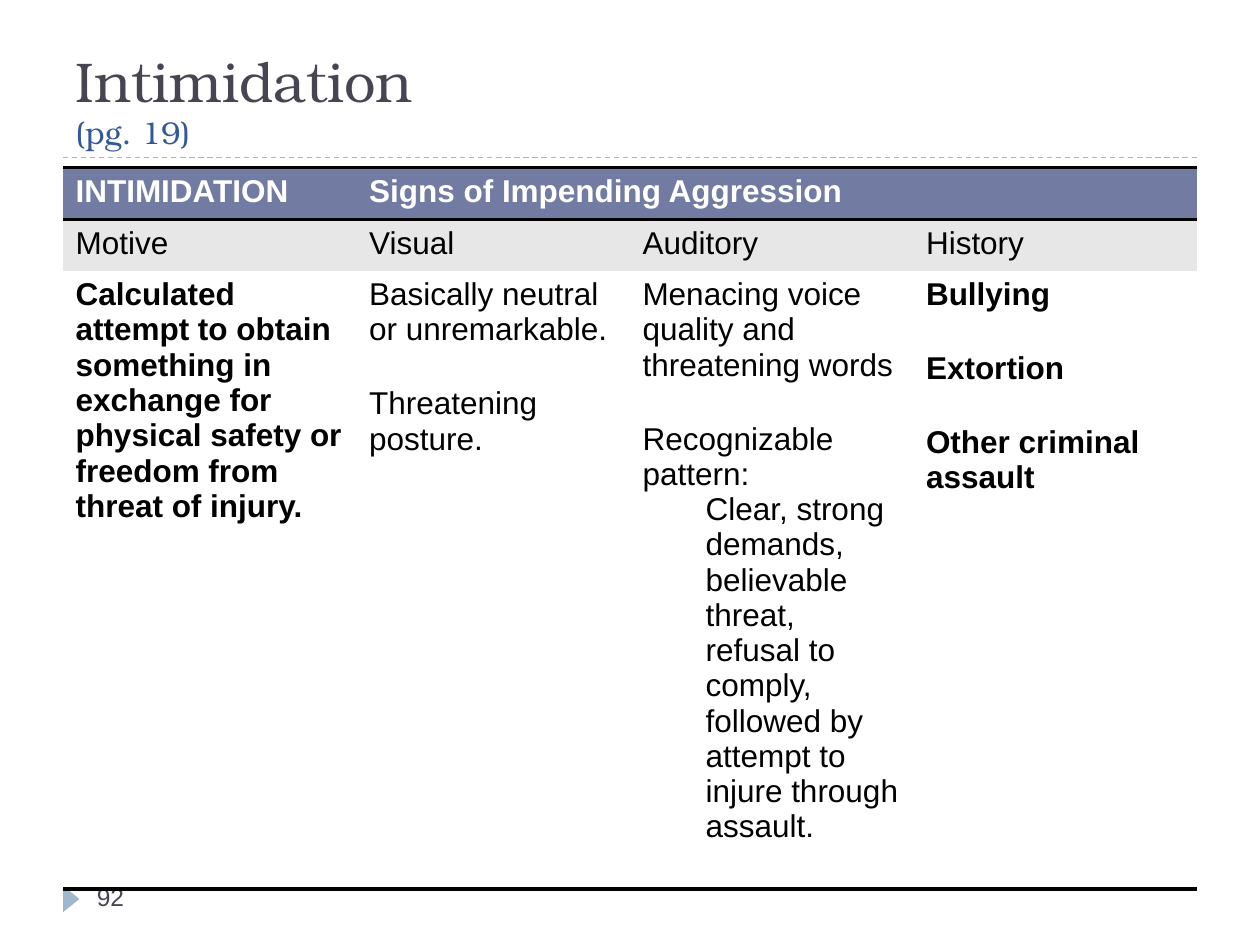
from lxml import etree
from pptx import Presentation
from pptx.dml.color import RGBColor
from pptx.enum.dml import MSO_LINE
from pptx.enum.shapes import MSO_CONNECTOR, MSO_SHAPE
from pptx.enum.text import MSO_ANCHOR, MSO_AUTO_SIZE, PP_ALIGN
from pptx.oxml.ns import qn
from pptx.util import Inches, Pt

STRAIGHT, TRIANGLE = MSO_CONNECTOR.STRAIGHT, MSO_SHAPE.ISOSCELES_TRIANGLE
DASH, BOTTOM, LEFT = MSO_LINE.DASH, MSO_ANCHOR.BOTTOM, PP_ALIGN.LEFT
NO_AUTOFIT = MSO_AUTO_SIZE.NONE

BLACK = RGBColor(0x00, 0x00, 0x00)
WHITE = RGBColor(0xFF, 0xFF, 0xFF)
SLATE = RGBColor(0x46, 0x46, 0x53)
BLUE = RGBColor(0x33, 0x59, 0x99)
PALE_BLUE = RGBColor(0x9F, 0xB8, 0xCD)
HEADER_FILL = RGBColor(0x72, 0x7C, 0xA3)
SUBHEAD_FILL = RGBColor(0xE7, 0xE7, 0xE7)

TITLE_FONT, BODY_FONT = "TeX Gyre Bonum", "Arial"
PLAIN_TABLE = "{2D5ABB26-0587-4C30-8999-92F81FD0307C}"
MARGIN, CONTENT_WIDTH = Inches(0.5), Inches(9)
TITLE_RULE, FOOTER_RULE = Inches(1.25), Inches(6.95)
COLUMNS = [2.33, 2.17, 2.25, 2.25]
ROWS = [0.41, 0.41, 4.9]
ROW_FILLS = [HEADER_FILL, SUBHEAD_FILL, WHITE]
ROW_BORDERS = [("a:lnT", "a:lnB"), (), ("a:lnB",)]
PARAGRAPH_GAP = Pt(22)

# Each cell lists its paragraphs; each paragraph lists its lines,
# of which those after the first are indented.
CELLS = [
    [[["INTIMIDATION"]], [["Signs of Impending Aggression"]], [], []],
    [[["Motive"]], [["Visual"]], [["Auditory"]], [["History"]]],
    [
        [["Calculated attempt to obtain something in exchange for "
          "physical safety or freedom from threat of injury."]],
        [["Basically neutral or unremarkable."], ["Threatening posture."]],
        [["Menacing voice quality and threatening words"],
         ["Recognizable pattern:", "Clear, strong demands,",
          "believable threat,",
          "refusal to comply, followed by attempt to injure through assault."]],
        [["Bullying"], ["Extortion"], ["Other criminal assault"]],
    ],
]
BOLD_CELLS = {(0, 0), (0, 1), (2, 0), (2, 3)}


def add_border(cell, side):
    border = etree.SubElement(cell._tc.get_or_add_tcPr(), qn(side), w=str(Pt(2)))
    fill = etree.SubElement(border, qn("a:solidFill"))
    etree.SubElement(fill, qn("a:srgbClr"), val=str(BLACK))


deck = Presentation()
deck.slide_width, deck.slide_height = Inches(10), Inches(7.5)
page = deck.slides.add_slide(deck.slide_layouts[5])

# Dashed rules and page marker
for height in (FOOTER_RULE, TITLE_RULE):
    rule = page.shapes.add_connector(
        STRAIGHT, MARGIN, height, MARGIN + CONTENT_WIDTH, height)
    rule.line.color.rgb = PALE_BLUE
    rule.line.width = Pt(0.75)
    rule.line.dash_style = DASH
    etree.SubElement(rule._element.spPr, qn("a:effectLst"))

marker = page.shapes.add_shape(
    TRIANGLE, Inches(0.46), Inches(7.07), Inches(0.21), Inches(0.13))
marker.rotation = 90
marker.shadow.inherit = False
marker.fill.solid()
marker.fill.fore_color.rgb = PALE_BLUE
marker.line.fill.background()

# Title with page reference
title = page.shapes.title
title.left, title.top = MARGIN, Inches(0.17)
title.width, title.height = CONTENT_WIDTH, TITLE_RULE - title.top
title.text_frame.auto_size = NO_AUTOFIT
title.text_frame.vertical_anchor = BOTTOM
heading = title.text_frame.paragraphs[0]
heading.alignment = LEFT
heading.font.name = TITLE_FONT
for text, size, color in (("Intimidation", 32, SLATE), ("(pg. 19)", 18, BLUE)):
    if heading.runs:
        heading.add_line_break()
    span = heading.add_run()
    span.text = text
    span.font.size = Pt(size)
    span.font.color.rgb = color

# Page number
box = page.shapes.add_textbox(Inches(0.67), FOOTER_RULE, Inches(2.17), Inches(0.4))
box.text_frame.word_wrap = True
number = box.text_frame.paragraphs[0]
number.text = "92"
number.font.name = BODY_FONT
number.font.size = Pt(14)
number.font.color.rgb = SLATE

# Table of warning signs
frame = page.shapes.add_table(
    len(ROWS), len(COLUMNS), MARGIN, Inches(1.33), CONTENT_WIDTH, Inches(sum(ROWS)))
table = frame.table
table._tbl.tblPr.find(qn("a:tableStyleId")).text = PLAIN_TABLE
for column, width in zip(table.columns, COLUMNS):
    column.width = Inches(width)
for row, height in zip(table.rows, ROWS):
    row.height = Inches(height)
table.cell(0, 1).merge(table.cell(0, 3))

for r, contents in enumerate(CELLS):
    for c, paragraphs in enumerate(contents):
        cell = table.cell(r, c)
        for side in ROW_BORDERS[r]:
            add_border(cell, side)
        cell.fill.solid()
        cell.fill.fore_color.rgb = ROW_FILLS[r]
        lines = [(g, i, text) for g, group in enumerate(paragraphs)
                 for i, text in enumerate(group)]
        for n, (group, indent, text) in enumerate(lines):
            para = cell.text_frame.add_paragraph() if n else cell.text_frame.paragraphs[0]
            para.text = text
            para.font.name = BODY_FONT
            para.font.size = Pt(18)
            para.font.bold = (r, c) in BOLD_CELLS
            para.font.color.rgb = BLACK if r else WHITE
            if indent:
                para.level = 1
                properties = para._p.get_or_add_pPr()
                properties.set("marL", str(Inches(0.5)))
                properties.set("indent", "0")
            elif group:
                para.space_before = PARAGRAPH_GAP

deck.save("out.pptx")
